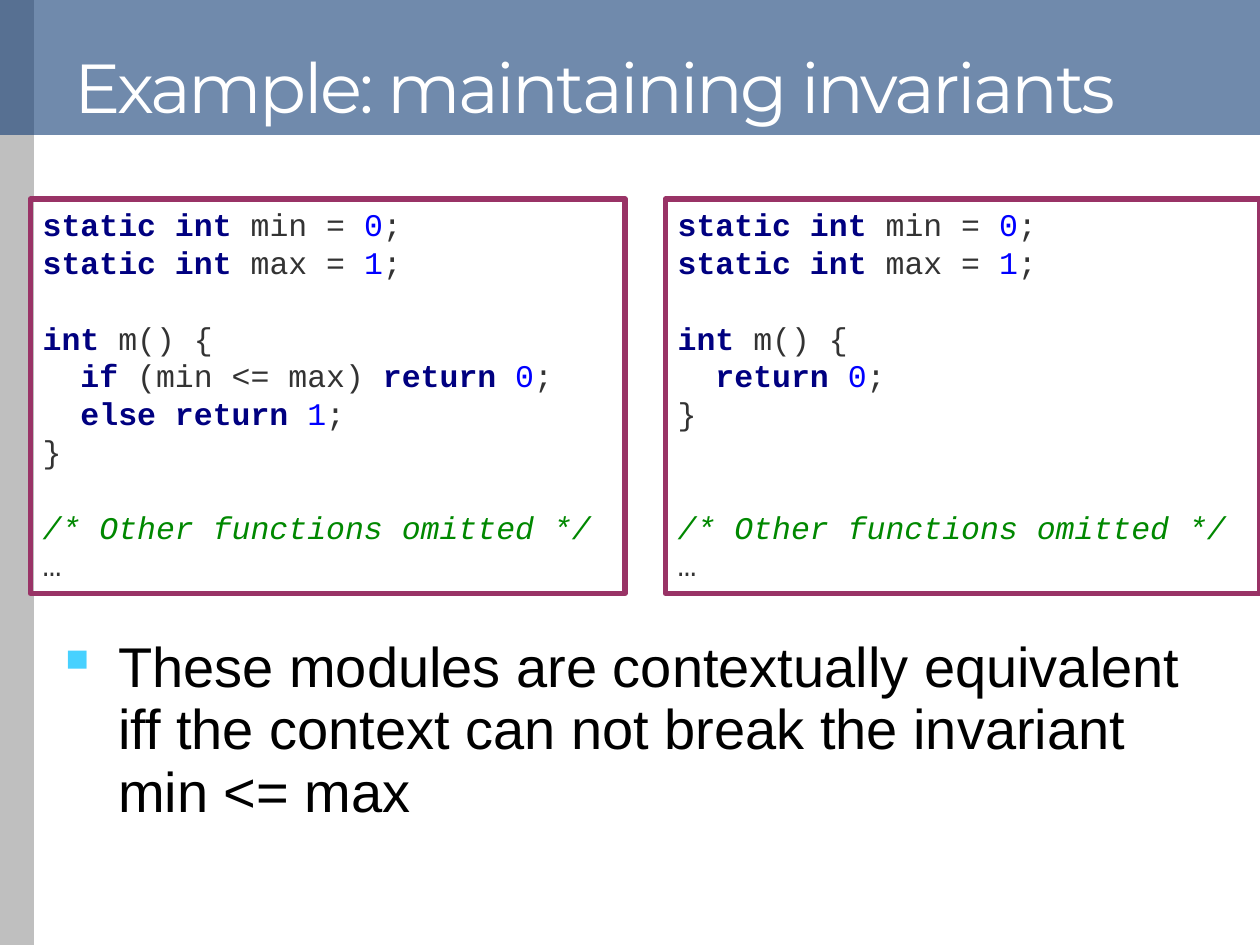
"""Builds a slide comparing two code modules that maintain an invariant."""
from lxml import etree
from pptx import Presentation
from pptx import util as u
from pptx.dml.color import RGBColor
from pptx.enum import shapes, text
from pptx.oxml.ns import qn

WHITE = RGBColor(0xFF, 0xFF, 0xFF)
BLACK = RGBColor(0, 0, 0)
GREY = RGBColor(0xBF, 0xBF, 0xBF)
NAVY = RGBColor(0x12, 0x3C, 0x75)
PLUM = RGBColor(0x99, 0x33, 0x66)
KEYWORD = RGBColor(0, 0, 0x80)
NUMBER = RGBColor(0, 0, 0xFF)
COMMENT = RGBColor(0, 0x88, 0)
PLAIN = RGBColor(0x33, 0x33, 0x33)

DECLARATIONS = [
    [("static int", KEYWORD), (" min = ", PLAIN), ("0", NUMBER), (";", PLAIN)],
    [("static int", KEYWORD), (" max = ", PLAIN), ("1", NUMBER), (";", PLAIN)],
    [],
    [("int", KEYWORD), (" m() {", PLAIN)],
]
CLOSING = [("}", PLAIN)]
REMAINDER = [
    [("/* Other functions omitted */", COMMENT)],
    [("…", PLAIN)],
]
CHECKED_BODY = [
    [("  if ", KEYWORD), ("(min <= max) ", PLAIN), ("return ", KEYWORD), ("0", NUMBER), (";", PLAIN)],
    [("  else return ", KEYWORD), ("1", NUMBER), (";", PLAIN)],
    CLOSING,
    [],
]
CONSTANT_BODY = [
    [("  return ", KEYWORD), ("0", NUMBER), (";", PLAIN)],
    CLOSING,
    [],
    [],
]


class Deck:
    """Holds the style and the current slide."""

    title_font, body_font, code_font = "Montserrat", "Arial", "Courier New"

    def __init__(self):
        self.presentation = Presentation()
        self.presentation.slide_width = u.Inches(10)
        self.presentation.slide_height = u.Inches(7.5)
        self.slide = self.presentation.slides.add_slide(self.presentation.slide_layouts[5])

    def style(self, paragraph, font, size, color=None):
        paragraph.alignment = text.PP_ALIGN.LEFT
        paragraph.font.name = font
        paragraph.font.size = u.Pt(size)
        if color is not None:
            paragraph.font.color.rgb = color

    def rectangle(self, left, top, width, height):
        box = self.slide.shapes.add_shape(
            shapes.MSO_SHAPE.RECTANGLE, *map(u.Inches, (left, top, width, height)))
        box.shadow.inherit = False
        return box

    def side_strip(self, width):
        strip = self.rectangle(0, 0, width, 7.5)
        strip.fill.solid()
        strip.fill.fore_color.rgb = GREY
        strip.line.fill.background()
        self.slide.shapes.title._element.addprevious(strip._element)

    def title(self, wording, height):
        banner = self.slide.shapes.title
        banner.left, banner.top, banner.width, banner.height = map(u.Inches, (0, 0, 10, height))
        banner.fill.solid()
        banner.fill.fore_color.rgb = NAVY
        tint = banner._element.spPr.find(f"{qn('a:solidFill')}/{qn('a:srgbClr')}")
        etree.SubElement(tint, qn("a:alpha"), val="60000")
        frame = banner.text_frame
        frame.text = wording
        frame.auto_size = text.MSO_AUTO_SIZE.NONE
        frame.vertical_anchor = text.MSO_ANCHOR.BOTTOM
        heading = frame.paragraphs[0]
        heading.line_spacing = 0.9
        heading._p.get_or_add_pPr().set("marL", str(u.Inches(0.49)))
        heading.runs[0]._r.get_or_add_rPr().set("spc", "-150")
        self.style(heading, self.title_font, 39.6, WHITE)

    def code(self, lines, left):
        listing = self.rectangle(left, 1.58, 4.72, 3.13)
        listing.fill.background()
        listing.line.color.rgb = PLUM
        listing.line.width = u.Pt(3)
        frame = listing.text_frame
        frame.word_wrap = False
        frame.vertical_anchor = text.MSO_ANCHOR.TOP
        for number, line in enumerate(lines):
            paragraph = frame.add_paragraph() if number else frame.paragraphs[0]
            self.style(paragraph, self.code_font, 18)
            for wording, color in line:
                token = paragraph.add_run()
                token.text = wording
                token.font.color.rgb = color
                token.font.bold = color == KEYWORD
                token.font.italic = color == COMMENT

    def bullet(self, wording, left, top, width, height):
        point = self.slide.shapes.add_textbox(*map(u.Inches, (left, top, width, height)))
        frame = point.text_frame
        frame.word_wrap = True
        frame.text = wording
        paragraph = frame.paragraphs[0]
        paragraph.line_spacing = 0.93
        props = paragraph._p.get_or_add_pPr()
        props.set("marL", str(u.Inches(0.49)))
        props.set("indent", str(u.Inches(-0.49)))
        marker_color = etree.SubElement(props, qn("a:buClr"))
        etree.SubElement(marker_color, qn("a:srgbClr"), val="47D1FF")
        etree.SubElement(props, qn("a:buChar"), char="▪")
        self.style(paragraph, self.body_font, 32, BLACK)


def main():
    deck = Deck()
    deck.side_strip(0.27)
    deck.title("Example: maintaining invariants", 1.07)
    for left, body in ((0.24, CHECKED_BODY), (5.28, CONSTANT_BODY)):
        deck.code(DECLARATIONS + body + REMAINDER, left)
    deck.bullet(
        "These modules are contextually equivalent iff the context can not break "
        "the invariant \vmin <= max", 0.35, 5.01, 9.54, 1.65)
    deck.presentation.save("out.pptx")


if __name__ == "__main__":
    main()
